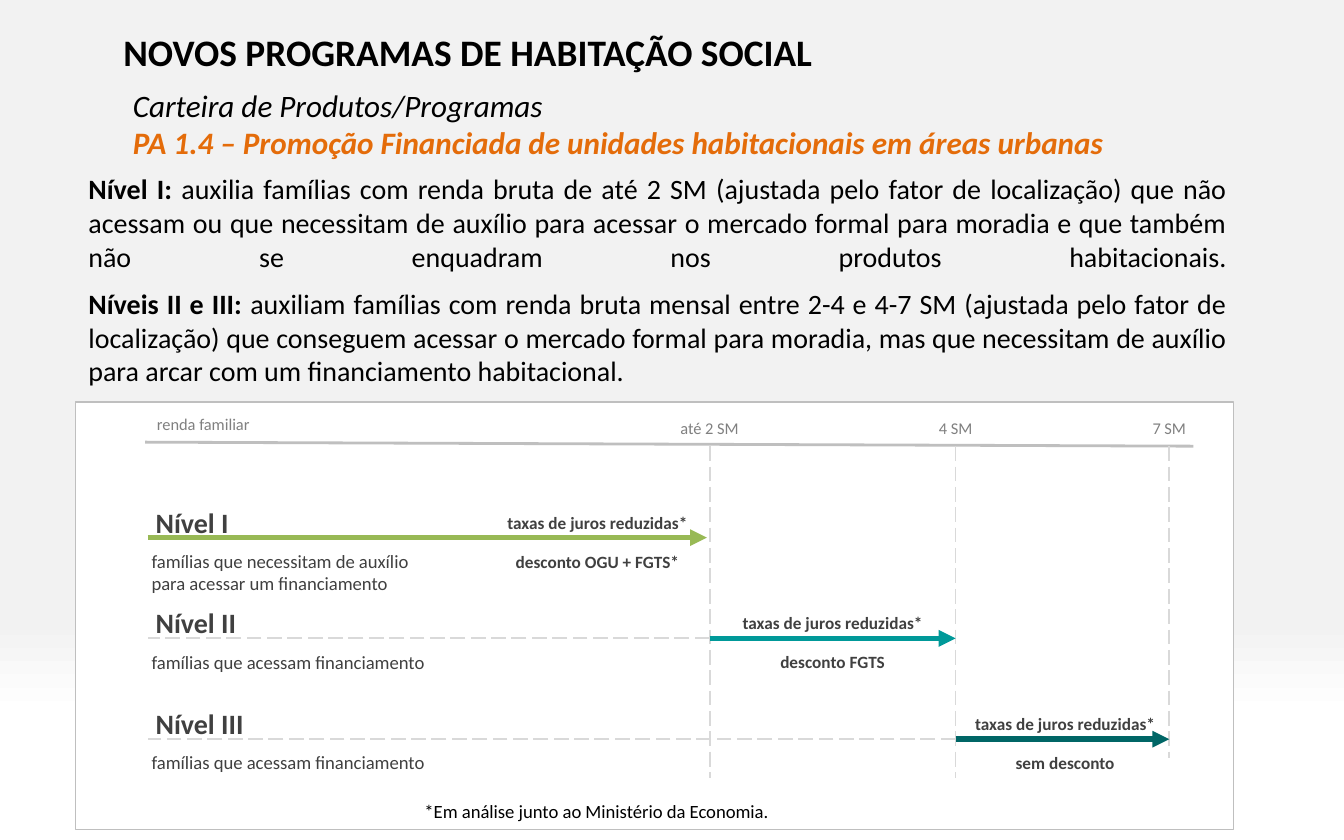
from lxml import etree
from pptx import Presentation
from pptx.dml.color import RGBColor
from pptx.enum.dml import MSO_LINE
from pptx.enum.shapes import MSO_CONNECTOR, MSO_SHAPE
from pptx.enum.text import PP_ALIGN
from pptx.oxml.ns import qn
from pptx.util import Inches, Pt

BLACK = RGBColor(0x00, 0x00, 0x00)
WHITE = RGBColor(0xFF, 0xFF, 0xFF)
ORANGE = RGBColor(0xE4, 0x6C, 0x0A)
DARK = RGBColor(0x40, 0x40, 0x40)
GRAY = RGBColor(0x80, 0x80, 0x80)
AXIS = RGBColor(0xBF, 0xBF, 0xBF)
DASH = RGBColor(0xD9, 0xD9, 0xD9)
GREEN = RGBColor(0x98, 0xB9, 0x55)
TEAL = RGBColor(0x00, 0x99, 0x99)
DEEP_TEAL = RGBColor(0x00, 0x66, 0x66)

TITLE = {"size": Pt(20), "color": BLACK, "bold": True}
SUBTITLE = {"size": Pt(16.7), "color": BLACK, "italic": True}
PROGRAM = {**SUBTITLE, "color": ORANGE, "bold": True}
BODY = {"size": Pt(15), "color": BLACK}
STRONG = {**BODY, "bold": True}
SCALE = {"size": Pt(8.8), "color": GRAY}
LEVEL = {"size": Pt(15), "color": DARK, "bold": True}
DETAIL = {"size": Pt(10), "color": DARK}
RATE = {"size": Pt(9.2), "color": DARK, "bold": True}
NOTE = {"size": Pt(10), "color": BLACK}


def add_text(page, area, paragraphs, align=PP_ALIGN.LEFT):
    """Each paragraph is a list of (text, format) spans."""
    box = page.shapes.add_textbox(*map(Inches, area))
    frame = box.text_frame
    frame.word_wrap = True
    for index, spans in enumerate(paragraphs):
        para = frame.add_paragraph() if index else frame.paragraphs[0]
        para.alignment = align
        for text, style in spans:
            span = para.add_run()
            span.text = text
            span.font.name = "Calibri"
            for key, value in style.items():
                if key == "color":
                    span.font.color.rgb = value
                else:
                    setattr(span.font, key, value)
    return box


def add_line(page, start, end, color, width, dashed=False, arrow=False):
    line = page.shapes.add_connector(
        MSO_CONNECTOR.STRAIGHT, *map(Inches, start + end))
    line.line.color.rgb = color
    line.line.width = Pt(width)
    if dashed:
        line.line.dash_style = MSO_LINE.LONG_DASH
    properties = line.element.spPr
    if arrow:
        etree.SubElement(properties.find(qn("a:ln")), qn("a:tailEnd"), type="triangle")
    etree.SubElement(properties, qn("a:effectLst"))


def paint_background(page):
    fill = page.background.fill
    fill.gradient()
    fill.gradient_angle = 270
    stops = page.element.find(".//" + qn("a:gsLst"))
    for stop in list(stops):
        stops.remove(stop)
    for percent, color in ((0, "F2F2F2"), (74, "F2F2F2"), (85, "FFFFFF"), (100, "FFFFFF")):
        stop = etree.SubElement(stops, qn("a:gs"), pos=str(percent * 1000))
        etree.SubElement(stop, qn("a:srgbClr"), val=color)


def add_heading(page, left, top):
    add_text(page, (left, top, 6.77, 0.44),
             [[("NOVOS PROGRAMAS DE HABITAÇÃO SOCIAL", TITLE)]])
    add_text(page, (left + 0.07, top + 0.42, 8.34, 0.66), [
        [("Carteira de Produtos/Programas", SUBTITLE)],
        [("PA 1.4 – Promoção Financiada de unidades habitacionais em áreas urbanas", PROGRAM)],
    ])


def add_description(page, area):
    box = add_text(page, area, [
        [("Nível I: ", STRONG),
         ("auxilia famílias com renda bruta de até 2 SM (ajustada pelo fator de "
          "localização) que não acessam ou que necessitam de auxílio para acessar o "
          "mercado formal para moradia e que também não se enquadram nos produtos "
          "habitacionais.", BODY)],
        [("Níveis II e III: ", STRONG),
         ("auxiliam famílias com renda bruta mensal entre 2-4 e 4-7 SM (ajustada pelo "
          "fator de localização) que conseguem acessar o mercado formal para moradia, "
          "mas que necessitam de auxílio para arcar com um financiamento habitacional.",
          BODY)],
    ], PP_ALIGN.JUSTIFY)
    # The closing break stretches the last line; its small end mark sets the gap
    first = box.text_frame.paragraphs[0]
    first.add_line_break()
    etree.SubElement(first._p, qn("a:endParaRPr"), sz="630")


def add_level(page, left, y, level):
    name, detail, start, end, center, discount, color = level
    if start > left:
        add_line(page, (start, y), (left, y), DASH, 1, dashed=True)
    add_line(page, (start, y), (end, y), color, 3, arrow=True)
    add_text(page, (left - 0.04, y - 0.29, 1.14, 0.34), [[(name, LEVEL)]])
    add_text(page, (left - 0.07, y + 0.04, 2.36, 0.43), [[(detail, DETAIL)]])
    for text, top in (("taxas de juros reduzidas*", y - 0.24), (discount, y + 0.05)):
        add_text(page, (center - 0.82, top, 1.63, 0.25), [[(text, RATE)]], PP_ALIGN.CENTER)


def add_income_chart(page, left, top, width, height):
    panel = page.shapes.add_shape(
        MSO_SHAPE.RECTANGLE, *map(Inches, (left, top, width, height)))
    panel.shadow.inherit = False
    panel.fill.solid()
    panel.fill.fore_color.rgb = WHITE
    panel.line.color.rgb = AXIS
    panel.line.width = Pt(0.75)

    # Income scale
    origin = left + 0.54
    two, four, seven = (left + offset for offset in (4.72, 6.55, 8.14))
    add_line(page, (origin - 0.02, top + 0.3), (left + 8.32, top + 0.33), AXIS, 1.5)
    add_text(page, (origin - 0.03, top + 0.04, 1.04, 0.24), [[("renda familiar", SCALE)]])
    for label, x, bottom in (("até 2 SM", two, 2.8), ("4 SM", four, 2.8),
                             ("7 SM", seven, 2.65)):
        add_text(page, (x - 0.42, top + 0.07, 0.84, 0.24), [[(label, SCALE)]],
                 PP_ALIGN.CENTER)
        add_line(page, (x, top + 0.33), (x, top + bottom), DASH, 1, dashed=True)

    # Support levels
    funded = "famílias que acessam financiamento"
    levels = (
        ("Nível I", "famílias que necessitam de auxílio para acessar um financiamento",
         origin, two - 0.02, two - 0.83, "desconto OGU + FGTS*", GREEN),
        ("Nível II", funded, two, four, four - 0.91, "desconto FGTS", TEAL),
        ("Nível III", funded, four, seven, seven - 0.77, "sem desconto", DEEP_TEAL),
    )
    for index, level in enumerate(levels):
        add_level(page, origin, top + 1.01 + 0.75 * index, level)

    # Footnote
    add_text(page, (left + 2.5, top + 2.91, 3.85, 0.27),
             [[("*Em análise junto ao Ministério da Economia.", NOTE)]])


def main():
    deck = Presentation()
    deck.slide_width, deck.slide_height = Inches(10), Inches(6.25)
    page = deck.slides.add_slide(deck.slide_layouts[6])
    paint_background(page)
    add_heading(page, 0.82, 0.17)
    add_description(page, (0.56, 1.23, 8.67, 1.73))
    add_income_chart(page, 0.56, 2.99, 8.62, 3.18)
    deck.save("out.pptx")


if __name__ == "__main__":
    main()
